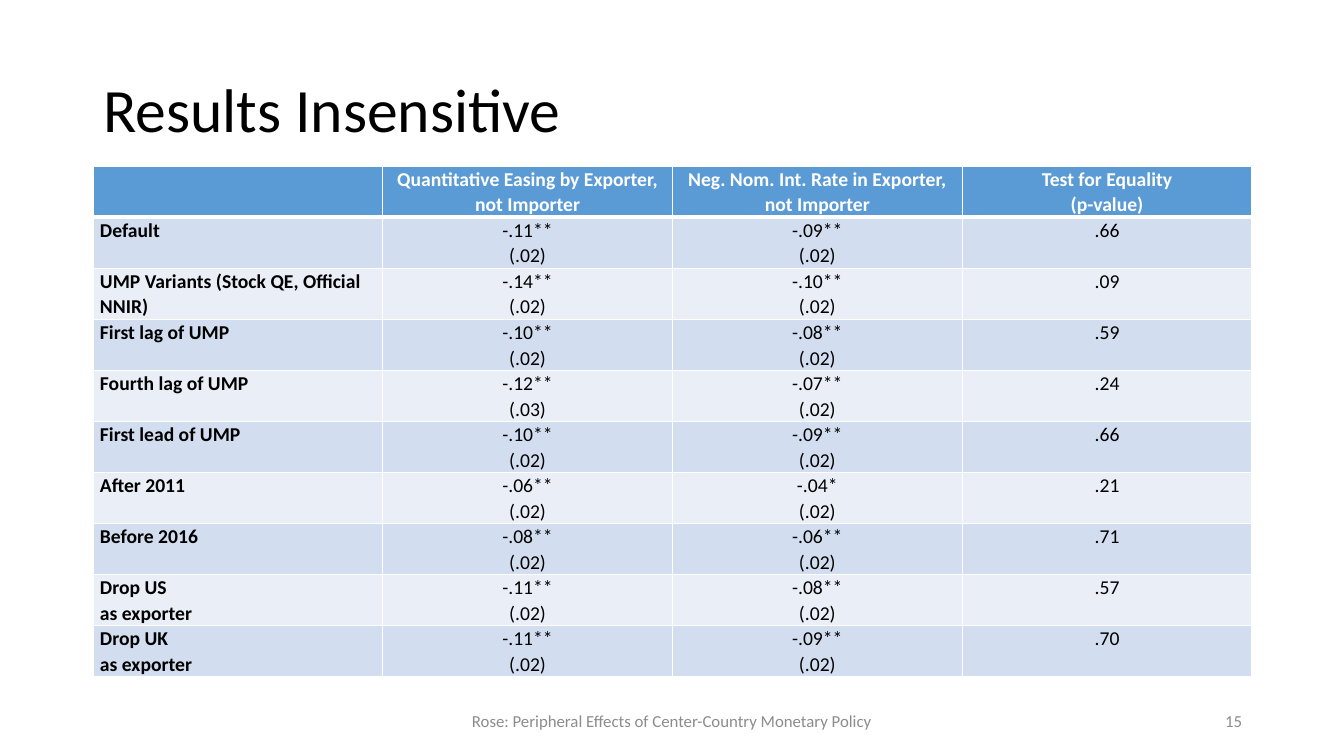
from lxml import etree
from pptx import Presentation
from pptx import util as u
from pptx.dml import color
from pptx.enum import text
from pptx.oxml import ns

EMU_PER_PX = 914400 / 100.8
FONT = "Calibri"
LEFT, CENTER, RIGHT = text.PP_ALIGN.LEFT, text.PP_ALIGN.CENTER, text.PP_ALIGN.RIGHT
MIDDLE, TOP = text.MSO_ANCHOR.MIDDLE, text.MSO_ANCHOR.TOP
HEADER_FILL, BAND_FILLS = "5B9BD5", ("D2DEEF", "EAEFF7")

HEADERS = ["", "Quantitative Easing by Exporter, not Importer",
           "Neg. Nom. Int. Rate in Exporter, not Importer",
           "Test for Equality\n(p-value)"]
RESULTS = [
    ["Default", "-.11**\n(.02)", "-.09**\n(.02)", ".66"],
    ["UMP Variants (Stock QE, Official NNIR)", "-.14**\n(.02)", "-.10**\n(.02)", ".09"],
    ["First lag of UMP", "-.10**\n(.02)", "-.08**\n(.02)", ".59"],
    ["Fourth lag of UMP", "-.12**\n(.03)", "-.07**\n(.02)", ".24"],
    ["First lead of UMP", "-.10**\n(.02)", "-.09**\n(.02)", ".66"],
    ["After 2011", "-.06**\n(.02)", "-.04*\n(.02)", ".21"],
    ["Before 2016", "-.08**\n(.02)", "-.06**\n(.02)", ".71"],
    ["Drop US\nas exporter", "-.11**\n(.02)", "-.08**\n(.02)", ".57"],
    ["Drop UK\nas exporter", "-.11**\n(.02)", "-.09**\n(.02)", ".70"],
]


def px(length):
    return u.Emu(round(length * EMU_PER_PX))


def rgb(value):
    return color.RGBColor.from_string(value)


def set_attributes(target, values):
    for name, value in values.items():
        setattr(target, name, value)


def write(frame, content, size, ink, align, bold=False, spacing=1.0):
    """Fill a text frame, one paragraph for each line of content."""
    frame.text = content
    for paragraph in frame.paragraphs:
        set_attributes(paragraph, {"alignment": align, "line_spacing": spacing})
        set_attributes(paragraph.font, {"name": FONT, "size": u.Pt(size), "bold": bold})
        paragraph.font.color.rgb = rgb(ink)


def set_borders(cell, top, bottom):
    """Draw white cell borders; widths are in points."""
    properties = cell._tc.get_or_add_tcPr()
    for tag, width in (("a:lnL", 1), ("a:lnR", 1), ("a:lnT", top), ("a:lnB", bottom)):
        line = etree.SubElement(properties, ns.qn(tag), w=str(u.Pt(width)))
        fill = etree.SubElement(line, ns.qn("a:solidFill"))
        etree.SubElement(fill, ns.qn("a:srgbClr"), val="FFFFFF")


def add_title(slide, box, content):
    title = slide.shapes.title
    set_attributes(title, dict(zip(("left", "top", "width", "height"), map(px, box))))
    set_attributes(title.text_frame, {"word_wrap": True, "vertical_anchor": MIDDLE})
    write(title.text_frame, content, 44, "000000", LEFT, spacing=0.9)


def add_results_table(slide, box, row_height):
    rows = [HEADERS] + RESULTS
    frame = slide.shapes.add_table(len(rows), len(HEADERS), *map(px, box))
    table = frame.table
    for column in table.columns:
        column.width = px(box[2] / len(HEADERS))
    for row in table.rows:
        row.height = px(row_height)
    frame.height = px(box[3])

    for r, values in enumerate(rows):
        for c, value in enumerate(values):
            cell = table.cell(r, c)
            set_attributes(cell, {"margin_left": px(7), "margin_right": px(7),
                                  "margin_top": 0, "margin_bottom": 0,
                                  "vertical_anchor": TOP})
            # The heavy rule lies between the header and the first result
            set_borders(cell, top=3 if r == 1 else 1, bottom=3 if r == 0 else 1)
            cell.fill.solid()
            cell.fill.fore_color.rgb = rgb(BAND_FILLS[(r - 1) % 2] if r else HEADER_FILL)
            write(cell.text_frame, value, 14, "000000" if r else "FFFFFF",
                  CENTER if c else LEFT, bold=r == 0 or c == 0, spacing=1.07)


def add_footer_text(slide, box, content, align):
    frame = slide.shapes.add_textbox(*map(px, box)).text_frame
    set_attributes(frame, {"word_wrap": True, "vertical_anchor": MIDDLE})
    write(frame, content, 12, "8C8C8C", align)


def main():
    presentation = Presentation()
    set_attributes(presentation, {"slide_width": px(1344), "slide_height": px(756)})
    slide = presentation.slides.add_slide(presentation.slide_layouts[5])

    # Title
    add_title(slide, (93, 40, 1159, 146), "Results Insensitive")
    # Results
    add_results_table(slide, (93, 166, 1159, 503), row_height=45)
    # Footer and slide number
    add_footer_text(slide, (445, 701, 454, 40),
                    "Rose: Peripheral Effects of Center-Country Monetary Policy", CENTER)
    add_footer_text(slide, (950, 701, 302, 40), "15", RIGHT)

    presentation.save("out.pptx")


if __name__ == "__main__":
    main()
